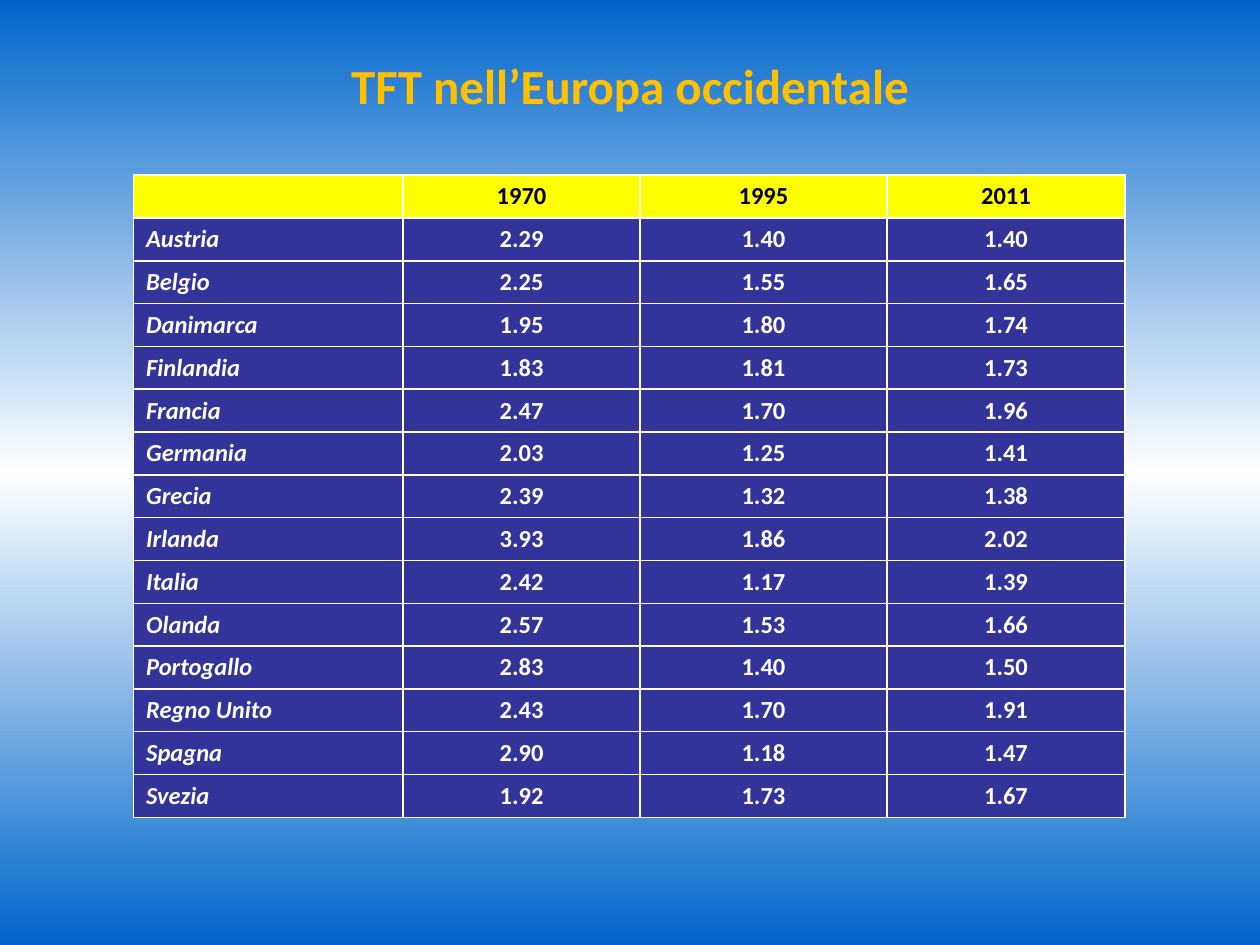
from copy import deepcopy

from lxml import etree
from pptx import Presentation
from pptx.dml.color import RGBColor
from pptx.enum import text
from pptx.oxml import ns
from pptx.util import Inches, Pt

COLORS = {
    "edge": "0066CC",
    "middle": "FFFFFF",
    "title": "FFC000",
    "header": "FFFF00",
    "header_text": "000000",
    "body": "333399",
    "body_text": "FFFFFF",
}
YEARS = ["", "1970", "1995", "2011"]
FERTILITY = [
    ("Austria", "2.29", "1.40", "1.40"),
    ("Belgio", "2.25", "1.55", "1.65"),
    ("Danimarca", "1.95", "1.80", "1.74"),
    ("Finlandia", "1.83", "1.81", "1.73"),
    ("Francia", "2.47", "1.70", "1.96"),
    ("Germania", "2.03", "1.25", "1.41"),
    ("Grecia", "2.39", "1.32", "1.38"),
    ("Irlanda", "3.93", "1.86", "2.02"),
    ("Italia", "2.42", "1.17", "1.39"),
    ("Olanda", "2.57", "1.53", "1.66"),
    ("Portogallo", "2.83", "1.40", "1.50"),
    ("Regno Unito", "2.43", "1.70", "1.91"),
    ("Spagna", "2.90", "1.18", "1.47"),
    ("Svezia", "1.92", "1.73", "1.67"),
]
COLUMN_WIDTHS = [2.14, 1.88, 1.96, 1.89]
ROW_HEIGHT = 0.34
CELL_SIZE = 14


def rgb(name):
    """Return the named colour."""
    return RGBColor.from_string(COLORS[name])


def write_text(paragraph, wording, color, alignment, **formats):
    """Write one formatted run into a paragraph."""
    paragraph.alignment = alignment
    run = paragraph.add_run()
    run.text = wording
    for name, value in {"name": "Calibri", "bold": True, **formats}.items():
        setattr(run.font, name, value)
    run.font.color.rgb = rgb(color)


def paint_background(slide):
    """Fill the slide with a vertical gradient that is light in the middle."""
    fill = slide.background.fill
    fill.gradient()
    fill.gradient_angle = 90
    stop_list = next(slide.element.iter(ns.qn("a:gsLst")))
    stop_list.insert(1, deepcopy(stop_list[0]))
    for stop, position, color in zip(
        fill.gradient_stops, (0, 0.5, 1), ("edge", "middle", "edge")
    ):
        stop.position = position
        stop.color.rgb = rgb(color)


def add_title(slide, left, top, width, height):
    """Place the centred heading in its box."""
    frame = slide.shapes.add_textbox(left, top, width, height).text_frame
    frame.word_wrap = True
    frame.vertical_anchor = text.MSO_ANCHOR.MIDDLE
    write_text(frame.paragraphs[0], "TFT nell’Europa occidentale", "title",
               text.PP_ALIGN.CENTER, size=Pt(28))


def fill_cell(cell, wording, part, is_country):
    """Colour a table cell and write its wording."""
    cell.fill.solid()
    cell.fill.fore_color.rgb = rgb(part)
    cell.vertical_anchor = text.MSO_ANCHOR.MIDDLE
    paragraph = cell.text_frame.paragraphs[0]
    if wording:
        alignment = text.PP_ALIGN.LEFT if is_country else text.PP_ALIGN.CENTER
        write_text(paragraph, wording, f"{part}_text", alignment,
                   size=Pt(CELL_SIZE), italic=is_country)
    else:
        etree.SubElement(paragraph._p, ns.qn("a:endParaRPr"),
                         sz=str(CELL_SIZE * 100))


def add_fertility_table(slide, left, top, width, height):
    """Place the table of rates by country and year."""
    rows = [YEARS, *FERTILITY]
    table = slide.shapes.add_table(
        len(rows), len(YEARS), left, top, width, height
    ).table
    table.horz_banding = False
    for column, column_width in zip(table.columns, COLUMN_WIDTHS):
        column.width = Inches(column_width)
    for row_index, row in enumerate(rows):
        part = "body" if row_index else "header"
        for column_index, wording in enumerate(row):
            fill_cell(table.cell(row_index, column_index), wording, part,
                      column_index == 0)


def main():
    """Build and save the presentation."""
    presentation = Presentation()
    presentation.slide_width = Inches(10)
    presentation.slide_height = Inches(7.5)
    slide = presentation.slides.add_slide(presentation.slide_layouts[6])
    paint_background(slide)
    add_title(slide, Inches(0.5), Inches(0.33), Inches(9), Inches(0.69))
    add_fertility_table(
        slide, Inches(1.06), Inches(1.39), Inches(sum(COLUMN_WIDTHS)),
        Inches(ROW_HEIGHT) * (len(FERTILITY) + 1)
    )
    presentation.save("out.pptx")


if __name__ == "__main__":
    main()
